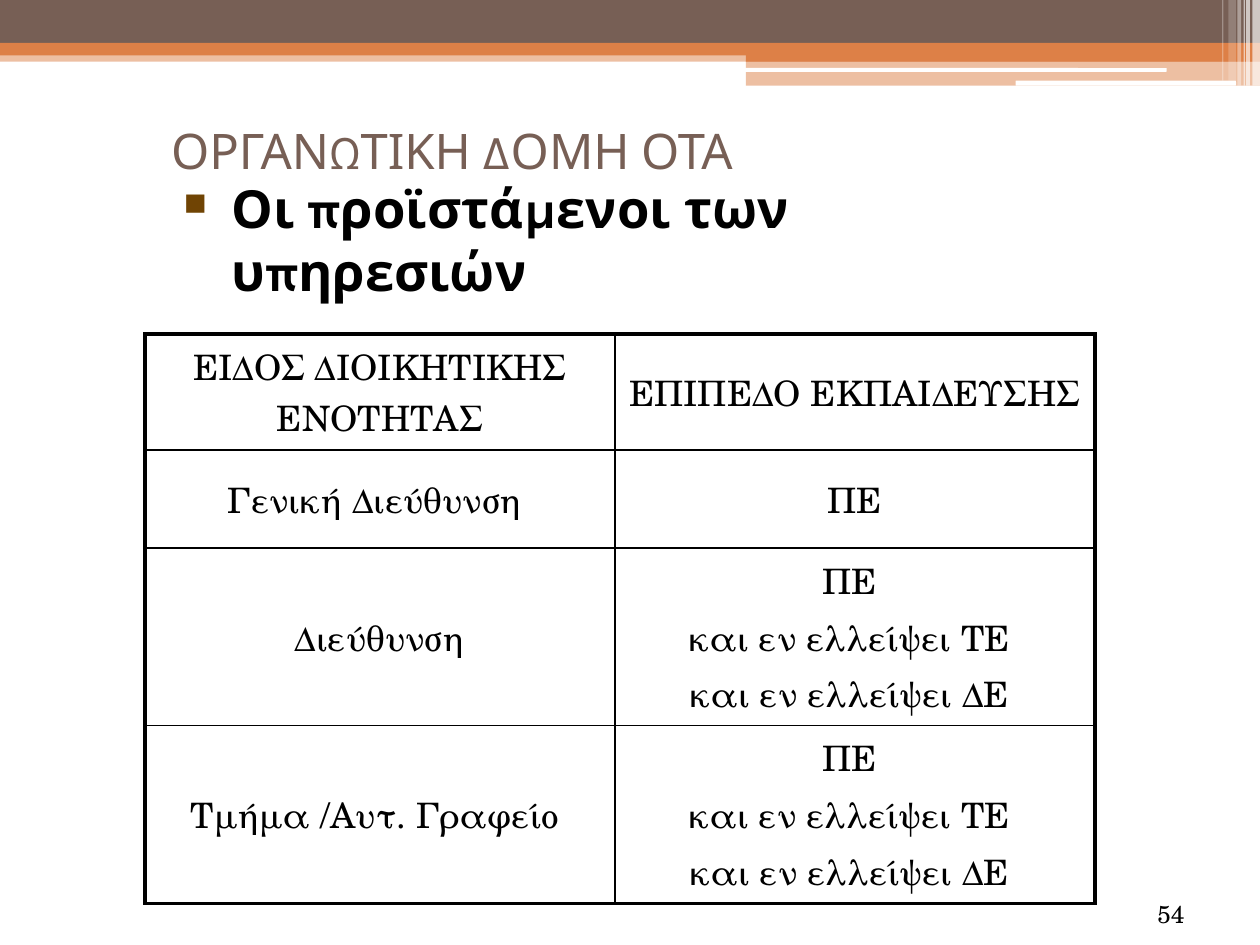
import pptx
import pptx.dml.color
import pptx.enum.shapes
import pptx.enum.text
import pptx.oxml.ns
import pptx.util
from lxml import etree

Inches = pptx.util.Inches
Pt = pptx.util.Pt
RGBColor = pptx.dml.color.RGBColor
Geometry = pptx.enum.shapes.MSO_SHAPE
Align = pptx.enum.text.PP_ALIGN
Anchor = pptx.enum.text.MSO_ANCHOR
qn = pptx.oxml.ns.qn

BROWN = RGBColor(0x77, 0x5F, 0x55)
ORANGE = RGBColor(0xDD, 0x80, 0x47)
BULLET_BROWN = RGBColor(0x70, 0x44, 0x04)
WHITE = RGBColor(0xFF, 0xFF, 0xFF)
BLACK = RGBColor(0, 0, 0)
HEADING_FONT = "Karla"
BODY_FONT = "TeX Gyre Schola"

BANDS = [
    (0, 0.4, 10, 0.09, ORANGE, 50),
    (0, 0, 10, 0.34, BROWN, 100),
    (0, 0.34, 10, 0.1, ORANGE, 100),
    (5.92, 0.39, 4.08, 0.1, ORANGE, 100),
    (5.92, 0.48, 4.08, 0.2, ORANGE, 50),
]
WHITE_BARS = [(5.91, 0.54, 3.35, 0.03), (8.06, 0.64, 1.75, 0.04)]
STRIPES = [
    (9.94, 0.06, 0.68, 65),
    (9.89, 0.03, 0.68, 65),
    (9.87, 0.01, 0.68, 60),
    (9.82, 0.03, 0.68, 40),
    (9.75, 0.06, 0.64, 20),
    (9.7, 0.01, 0.64, 30),
]

EDUCATION_LEVELS = ["ΠΕ ", "και εν ελλείψει ΤΕ ", "και εν ελλείψει ΔΕ "]
UNIT_ROWS = [
    (["ΕΙΔΟΣ ΔΙΟΙΚΗΤΙΚΗΣ ΕΝΟΤΗΤΑΣ"], ["ΕΠΙΠΕΔΟ ΕΚΠΑΙΔΕΥΣΗΣ"]),
    (["Γενική Διεύθυνση "], ["ΠΕ"]),
    (["Διεύθυνση"], EDUCATION_LEVELS),
    (["Τμήμα /Αυτ. Γραφείο "], EDUCATION_LEVELS),
]
COLUMN_WIDTHS = [3.73, 3.81]
ROW_HEIGHTS = [0.92, 0.78, 1.41, 1.41]


def add_band(slide, left, top, width, height, color, opacity=100, geometry=Geometry.RECTANGLE):
    """Add a borderless bar with the given opacity in percent."""
    band = slide.shapes.add_shape(
        geometry, Inches(left), Inches(top), Inches(width), Inches(height))
    band.shadow.inherit = False
    band.line.fill.background()
    band.fill.solid()
    band.fill.fore_color.rgb = color
    if opacity < 100:
        tint = band.fill._xPr.find(qn("a:solidFill"))[0]
        etree.SubElement(tint, qn("a:alpha"), val=str(opacity * 1000))


def add_run(paragraph, wording, size, font, color, bold=False):
    """Add one styled run to a paragraph."""
    run = paragraph.add_run()
    run.text = wording
    run.font.size = Pt(size)
    run.font.name = font
    run.font.color.rgb = color
    run.font.bold = bold


def add_text(slide, left, top, width, height):
    """Add a bottom-anchored wrapping text box and return its paragraph."""
    frame = slide.shapes.add_textbox(
        Inches(left), Inches(top), Inches(width), Inches(height)).text_frame
    frame.word_wrap = True
    frame.vertical_anchor = Anchor.BOTTOM
    return frame.paragraphs[0]


def set_hanging_indent(paragraph, indent):
    """Give a paragraph a hanging indent in inches and return its properties."""
    properties = paragraph._p.get_or_add_pPr()
    properties.set("marL", str(Inches(indent)))
    properties.set("indent", str(-Inches(indent)))
    return properties


def set_square_bullet(paragraph):
    """Give a paragraph a small brown square bullet."""
    properties = set_hanging_indent(paragraph, 0.38)
    bullet_color = etree.SubElement(properties, qn("a:buClr"))
    etree.SubElement(bullet_color, qn("a:srgbClr"), val=str(BULLET_BROWN))
    etree.SubElement(properties, qn("a:buSzPct"), val="60000")
    etree.SubElement(properties, qn("a:buChar"), char="■")


def set_borders(cell, widths):
    """Draw black borders with widths in left, right, top, bottom order."""
    properties = cell._tc.get_or_add_tcPr()
    for position, (side, width) in enumerate(zip("LRTB", widths)):
        border = etree.Element(qn(f"a:ln{side}"), w=str(Pt(width)))
        fill = etree.SubElement(border, qn("a:solidFill"))
        etree.SubElement(fill, qn("a:srgbClr"), val=str(BLACK))
        properties.insert(position, border)


def fill_cell(cell, lines):
    """Write centred lines into an unfilled cell."""
    cell.fill.background()
    cell.vertical_anchor = Anchor.MIDDLE
    for position, line in enumerate(lines):
        frame = cell.text_frame
        paragraph = frame.add_paragraph() if position else frame.paragraphs[0]
        paragraph.alignment = Align.CENTER
        paragraph.space_before = Pt(3)
        add_run(paragraph, line, 20, BODY_FONT, BLACK)


def add_units_table(slide):
    """Add the table of units and education levels with a heavy outline."""
    row_count, column_count = len(ROW_HEIGHTS), len(COLUMN_WIDTHS)
    table = slide.shapes.add_table(
        row_count, column_count, Inches(1.15), Inches(2.65),
        Inches(sum(COLUMN_WIDTHS)), Inches(sum(ROW_HEIGHTS))).table
    table.first_row = False
    table.horz_banding = False
    for column, width in zip(table.columns, COLUMN_WIDTHS):
        column.width = Inches(width)
    for r, (row, height) in enumerate(zip(table.rows, ROW_HEIGHTS)):
        row.height = Inches(height)
        for c, cell in enumerate(row.cells):
            fill_cell(cell, UNIT_ROWS[r][c])
            on_outline = (c == 0, c == column_count - 1, r == 0, r == row_count - 1)
            set_borders(cell, [2.25 if outer else 1 for outer in on_outline])


def add_header(slide):
    """Add the coloured bands, white bars and stripes at the top."""
    for band in BANDS:
        add_band(slide, *band)
    for bar in WHITE_BARS:
        add_band(slide, *bar, WHITE, geometry=Geometry.ROUNDED_RECTANGLE)
    for left, width, height, opacity in STRIPES:
        add_band(slide, left, 0, width, height, WHITE, opacity)


def main():
    """Build the slide and save it."""
    presentation = pptx.Presentation()
    presentation.slide_width = Inches(10)
    presentation.slide_height = Inches(7.5)
    slide = presentation.slides.add_slide(presentation.slide_layouts[6])

    add_header(slide)
    subtitle = add_text(slide, 1.36, 1.78, 7, 0.67)
    subtitle.space_before = Pt(6)
    set_square_bullet(subtitle)
    add_run(subtitle, "Οι προϊστάμενοι των υπηρεσιών", 30, HEADING_FONT, BLACK, bold=True)

    add_units_table(slide)

    heading = add_text(slide, 1.26, 0.22, 8.52, 1.25)
    set_hanging_indent(heading, 0.62)
    add_run(heading, "ΟΡΓΑΝΩΤΙΚΗ ΔΟΜΗ ΟΤΑ", 28, HEADING_FONT, BROWN)

    page_number = add_text(slide, 7.42, 6.92, 2.08, 0.5)
    page_number.alignment = Align.RIGHT
    add_run(page_number, "54", 14, BODY_FONT, BLACK)

    presentation.save("out.pptx")


if __name__ == "__main__":
    main()
